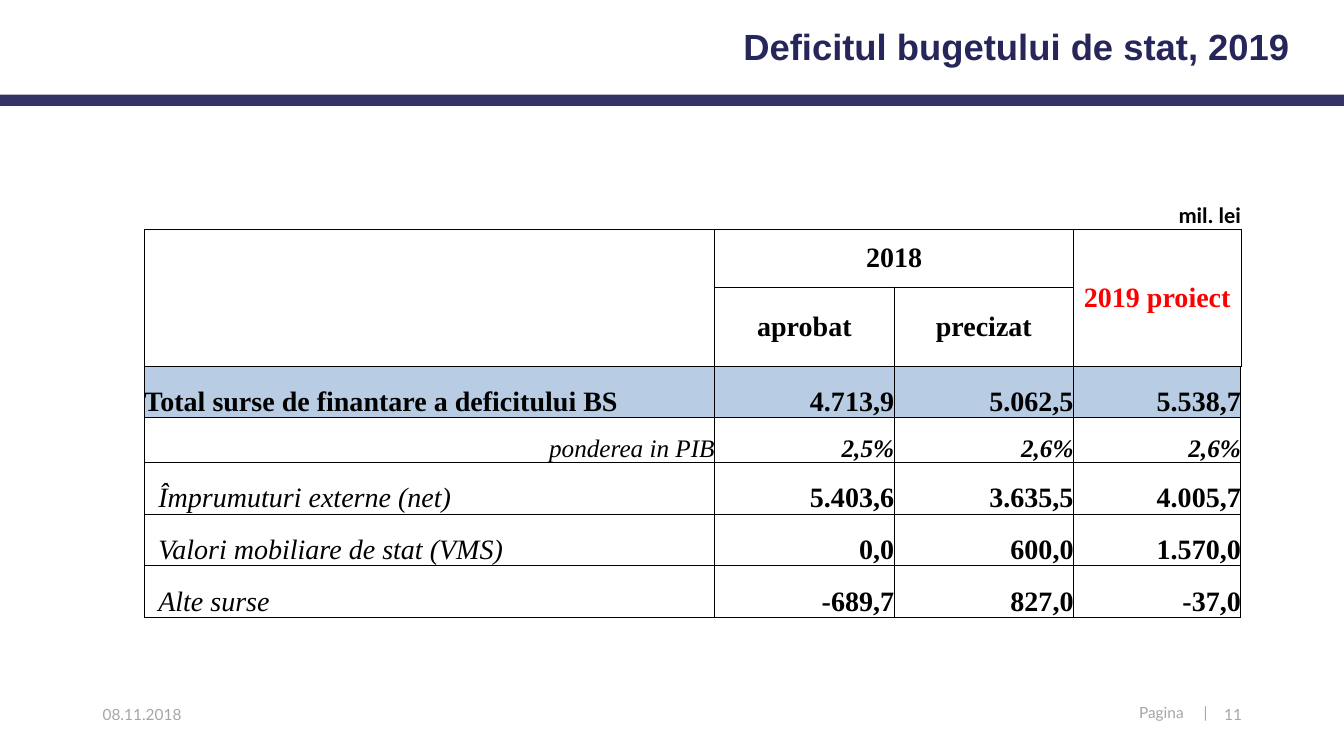
from dataclasses import dataclass

from lxml.etree import SubElement
from pptx import Presentation
from pptx.dml.color import RGBColor
from pptx.enum.shapes import MSO_SHAPE
from pptx.enum.text import MSO_ANCHOR, MSO_AUTO_SIZE, PP_ALIGN
from pptx.oxml.ns import qn
from pptx.util import Inches, Length, Pt

PAGE_WIDTH, PAGE_HEIGHT = Inches(13.33), Inches(7.5)
COLORS = {
    "bar": "333366", "title": "26265A", "footer": "A6A6A6", "ink": "000000",
    "project": "FF0000", "total": "B8CCE4", "plain": "FFFFFF",
}
LEFT, CENTER, RIGHT = PP_ALIGN.LEFT, PP_ALIGN.CENTER, PP_ALIGN.RIGHT


def across(percent: float) -> Length:
    """Share of the slide's width."""
    return Length(round(PAGE_WIDTH * percent / 100))


def down(percent: float) -> Length:
    """Share of the slide's height."""
    return Length(round(PAGE_HEIGHT * percent / 100))


@dataclass(frozen=True)
class Style:
    font: str
    size: float
    color: str
    bold: bool = False
    italic: bool = False
    align: PP_ALIGN = LEFT


@dataclass(frozen=True)
class FooterItem:
    text: str
    left: float
    width: float
    height: float
    align: PP_ALIGN = LEFT
    inset: float = 0.1
    tab: float = 0
    spacing: float = 1.0


@dataclass(frozen=True)
class BudgetRow:
    label: str
    values: tuple[str, ...]
    label_style: Style
    value_style: Style
    fill: str = "plain"
    indent: float = 0


SERIF = "Times New Roman"
TITLE = Style("Arial", 26, "title", bold=True, align=RIGHT)
UNIT = Style("Calibri", 16, "ink", bold=True, align=RIGHT)
HEADER = Style(SERIF, 20, "ink", bold=True, align=CENTER)
PROJECT = Style(SERIF, 20, "project", bold=True, align=CENTER)
TOTAL = Style(SERIF, 20, "ink", bold=True)
VALUE = Style(SERIF, 20, "ink", bold=True, align=RIGHT)
SOURCE = Style(SERIF, 20, "ink", italic=True)
SHARE = Style(SERIF, 18, "ink", italic=True, align=RIGHT)
SHARE_VALUE = Style(SERIF, 18, "ink", bold=True, italic=True, align=RIGHT)

FOOTER = (
    FooterItem("Pagina\t|", 83.55, 7.43, 3.87, inset=0.16, tab=0.64, spacing=0.9),
    FooterItem("08.11.2018", 6.9, 22.5, 5.33),
    FooterItem("11", 90.08, 3.08, 5.33, align=RIGHT),
)
COLUMN_WIDTHS = (42.45, 13.35, 13.35, 12.45)
ROW_HEIGHTS = (5.6, 7.6, 10.53, 6.67, 6, 6.8, 6.8, 6.93)
FIRST_BODY_ROW = 3
BUDGET_ROWS = (
    BudgetRow("Total surse de finantare a deficitului BS",
              ("4.713,9", "5.062,5", "5.538,7"), TOTAL, VALUE, fill="total"),
    BudgetRow("ponderea in PIB", ("2,5%", "2,6%", "2,6%"), SHARE, SHARE_VALUE),
    BudgetRow("Împrumuturi externe (net)",
              ("5.403,6", "3.635,5", "4.005,7"), SOURCE, VALUE, indent=0.14),
    BudgetRow("Valori mobiliare de stat (VMS)",
              ("0,0", "600,0", "1.570,0"), SOURCE, VALUE, indent=0.14),
    BudgetRow("Alte surse", ("-689,7", "827,0", "-37,0"), SOURCE, VALUE, indent=0.14),
)


def color(name: str) -> RGBColor:
    return RGBColor.from_string(COLORS[name])


def write(para, text: str, style: Style) -> None:
    para.alignment = style.align
    span = para.add_run()
    span.text = text
    font = span.font
    font.name, font.size = style.font, Pt(style.size)
    font.bold, font.italic = style.bold, style.italic
    font.color.rgb = color(style.color)


def add_bar(page) -> None:
    bar = page.shapes.add_shape(
        MSO_SHAPE.RECTANGLE, 0, down(12.53), PAGE_WIDTH, down(1.47))
    bar.shadow.inherit = False
    bar.fill.solid()
    bar.fill.fore_color.rgb = color("bar")
    bar.line.fill.background()


def add_title(page) -> None:
    title = page.shapes.title
    title.left, title.top = across(40.43), down(3.2)
    title.width, title.height = across(56.33), down(4.67)
    frame = title.text_frame
    frame.auto_size = MSO_AUTO_SIZE.NONE
    frame.vertical_anchor = MSO_ANCHOR.TOP
    para = frame.paragraphs[0]
    para.line_spacing = 0.9
    write(para, "Deficitul bugetului de stat, 2019", TITLE)


def add_footer_item(page, item: FooterItem) -> None:
    box = page.shapes.add_textbox(
        across(item.left), down(92.67), across(item.width), down(item.height))
    frame = box.text_frame
    frame.word_wrap = True
    frame.margin_left = Inches(item.inset)
    para = frame.paragraphs[0]
    if item.tab:
        tabs = SubElement(para._p.get_or_add_pPr(), qn("a:tabLst"))
        SubElement(tabs, qn("a:tab"), pos=str(Inches(item.tab)), algn="l")
    para.line_spacing = item.spacing
    write(para, item.text, Style("Lato", 11, "footer", align=item.align))


def set_borders(cell, widths: dict[str, float]) -> None:
    """Draw the sides L, R, T and B in points; zero leaves a side open."""
    properties = cell._tc.get_or_add_tcPr()
    for side, width in widths.items():
        line = SubElement(properties, qn(f"a:ln{side}"), w=str(Pt(width)))
        if width:
            fill = SubElement(line, qn("a:solidFill"))
            SubElement(fill, qn("a:srgbClr"), val=COLORS["ink"])
        else:
            SubElement(line, qn("a:noFill"))


def border_widths(row: int, column: int) -> dict[str, float]:
    """Thin inner lines, a heavier frame, and an open row for the unit."""
    outer_left, outer_right = column == 0, column == len(COLUMN_WIDTHS) - 1
    if row == 0:
        return {"L": 0, "R": 0, "T": 0, "B": 1 if outer_left else 0.5}
    return {
        "L": 1 if outer_left else 0.5,
        "R": 1 if outer_right and row >= FIRST_BODY_ROW else 0.5,
        "T": 1 if outer_left and row == 1 else 0.5,
        "B": 1 if row == len(ROW_HEIGHTS) - 1 else 0.5,
    }


def add_budget_table(page) -> None:
    table = page.shapes.add_table(
        len(ROW_HEIGHTS), len(COLUMN_WIDTHS), across(10.73), down(24.8),
        across(sum(COLUMN_WIDTHS)), down(sum(ROW_HEIGHTS))).table
    table.first_row = table.horz_banding = False
    for column, width in zip(table.columns, COLUMN_WIDTHS):
        column.width = across(width)
    for row, height in zip(table.rows, ROW_HEIGHTS):
        row.height = down(height)

    for r in range(len(ROW_HEIGHTS)):
        for c in range(len(COLUMN_WIDTHS)):
            cell = table.cell(r, c)
            cell.margin_left = cell.margin_right = 0
            cell.margin_top = cell.margin_bottom = 0
            cell.vertical_anchor = (
                MSO_ANCHOR.MIDDLE if 0 < r < FIRST_BODY_ROW else MSO_ANCHOR.BOTTOM)
            set_borders(cell, border_widths(r, c))
            cell.fill.background()

    for first, last in (((1, 0), (2, 0)), ((1, 1), (1, 2)), ((1, 3), (2, 3))):
        table.cell(*first).merge(table.cell(*last))
    for r, c, text, style in (
        (0, 3, "mil. lei", UNIT), (1, 1, "2018", HEADER),
        (1, 3, "2019 proiect", PROJECT), (2, 1, "aprobat", HEADER),
        (2, 2, "precizat", HEADER),
    ):
        write(table.cell(r, c).text_frame.paragraphs[0], text, style)

    for r, entry in enumerate(BUDGET_ROWS, FIRST_BODY_ROW):
        table.cell(r, 0).margin_left = Inches(entry.indent)
        for c, text in enumerate((entry.label, *entry.values)):
            cell = table.cell(r, c)
            cell.fill.solid()
            cell.fill.fore_color.rgb = color(entry.fill)
            style = entry.value_style if c else entry.label_style
            write(cell.text_frame.paragraphs[0], text, style)


def main() -> None:
    deck = Presentation()
    deck.slide_width, deck.slide_height = PAGE_WIDTH, PAGE_HEIGHT
    page = deck.slides.add_slide(deck.slide_layouts[5])
    add_bar(page)
    add_title(page)
    for item in FOOTER:
        add_footer_item(page, item)
    add_budget_table(page)
    deck.save("out.pptx")


if __name__ == "__main__":
    main()
